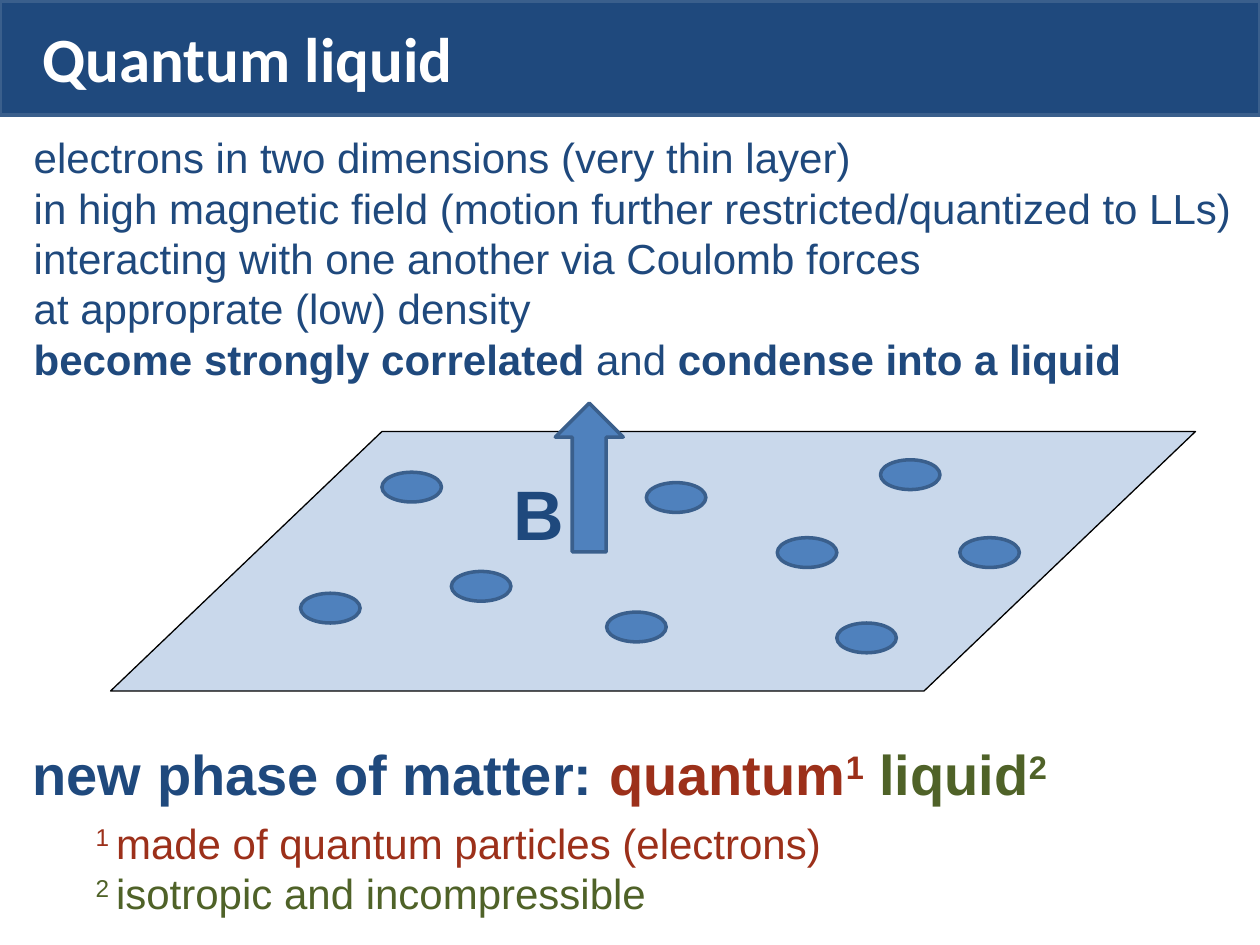
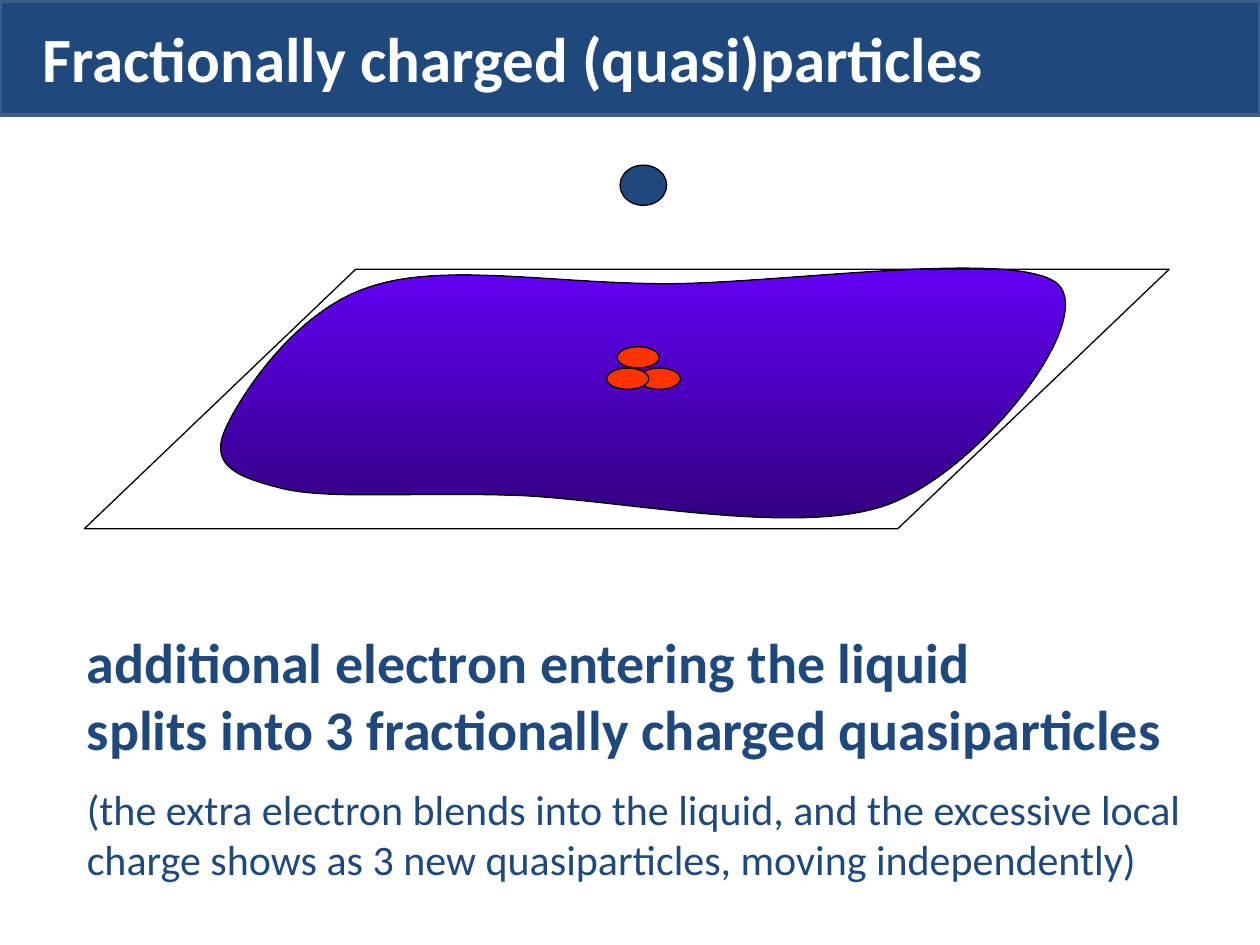
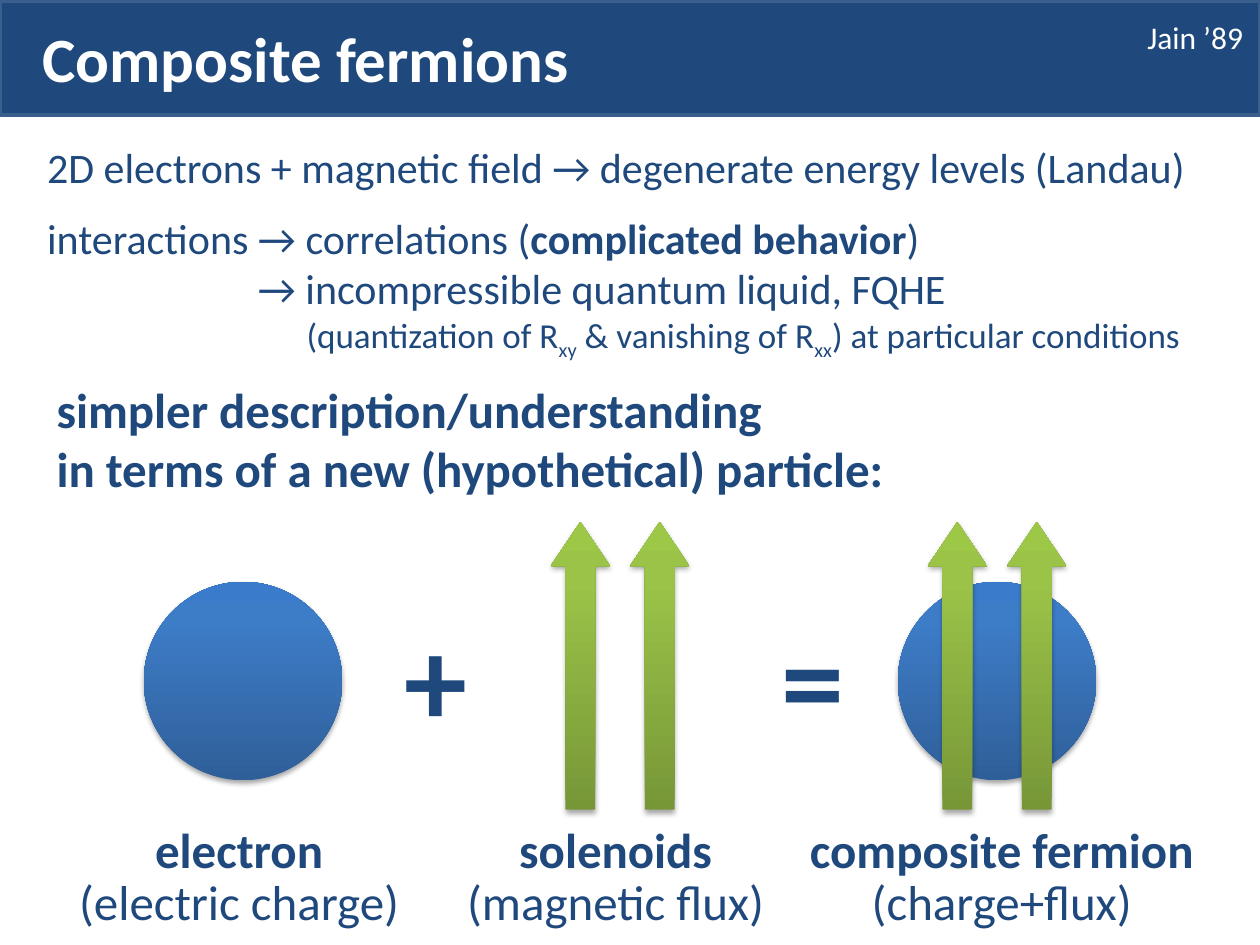
from copy import deepcopy
from dataclasses import dataclass

from lxml.etree import SubElement
from pptx import Presentation
from pptx.dml.color import RGBColor as RGB
from pptx.enum.shapes import MSO_SHAPE as Kind
from pptx.enum.text import MSO_ANCHOR as Anchor, MSO_AUTO_SIZE as Fit, PP_ALIGN as Align
from pptx.oxml.ns import qn
from pptx.util import Cm, Pt

NAVY = RGB(0x1F, 0x49, 0x7D)
EDGE = RGB(0x3A, 0x5F, 0x8C)
BLUE = RGB(0x4F, 0x81, 0xBD)
WHITE = RGB(0xFF, 0xFF, 0xFF)
BLACK = RGB(0, 0, 0)
RUST = RGB(0x9C, 0x30, 0x1A)
OLIVE = RGB(0x4F, 0x62, 0x28)
RED = RGB(0xFF, 0x33, 0x00)

# Gradient stops as (position, colour), from bottom to top
LIQUID = [(0, RGB(0x2F, 0x00, 0x76)), (1, RGB(0x66, 0x00, 0xFF))]
SPHERE = [(0, RGB(0x2F, 0x5F, 0x99)), (0.8, RGB(0x3D, 0x7C, 0xC7)), (1, RGB(0x3A, 0x7C, 0xCB))]
GREEN = [(0, RGB(0x77, 0x97, 0x37)), (0.8, RGB(0x9B, 0xC3, 0x48)), (1, RGB(0x9D, 0xC7, 0x46))]


@dataclass
class Run:
    text: str
    size: int
    bold: bool = False
    tint: RGB = NAVY
    base: int = 0


def paint(shape, fill=None, line=None, width=0.75):
    """Set a plain, gradient or empty fill and the outline; drop the shadow."""
    shape.shadow.inherit = False
    if fill is None:
        shape.fill.background()
    elif isinstance(fill, list):
        shape.fill.gradient()
        shape.fill.gradient_angle = 90
        first = shape.fill.gradient_stops[0]._gs
        for _ in fill[2:]:
            first.addnext(deepcopy(first))
        for stop, (place, tint) in zip(shape.fill.gradient_stops, fill):
            stop.position = place
            stop.color.rgb = tint
    else:
        shape.fill.solid()
        shape.fill.fore_color.rgb = fill
    if line is None:
        shape.line.fill.background()
    else:
        shape.line.color.rgb = line
        shape.line.width = Pt(width)
    return shape


def write(slide, spot, rows, font="Calibri", align=Align.LEFT, wrap=True):
    """Add a text box with one paragraph per row of runs; return its frame."""
    frame = slide.shapes.add_textbox(*map(Cm, spot)).text_frame
    frame.word_wrap = wrap
    frame.auto_size = Fit.SHAPE_TO_FIT_TEXT
    for i, row in enumerate(rows):
        para = frame.add_paragraph() if i else frame.paragraphs[0]
        para.alignment = align
        for part in row:
            for j, text in enumerate(part.text.split("\n")):
                if j:
                    para.add_line_break()
                if not text:
                    continue
                run = para.add_run()
                run.text = text
                run.font.name = font
                run.font.size = Pt(part.size)
                run.font.bold = part.bold
                run.font.color.rgb = part.tint
                if part.base:
                    run._r.get_or_add_rPr().set("baseline", str(part.base * 1000))
    return frame


deck = Presentation()
deck.slide_width, deck.slide_height = Cm(25.4), Cm(19.05)

# Shared title band
slides = []
for title in ("Quantum liquid", "Fractionally charged (quasi)particles", "Composite fermions"):
    slide = deck.slides.add_slide(deck.slide_layouts[6])
    band = slide.shapes.add_shape(Kind.RECTANGLE, 0, Cm(0.03), Cm(25.4), Cm(2.29))
    paint(band, NAVY, EDGE, 2)
    frame = write(slide, (0.61, -0.08, 23.39, 2.46), [[Run(title, 36, True, WHITE)]])
    frame.auto_size = Fit.NONE
    frame.vertical_anchor = Anchor.MIDDLE
    slides.append(slide)
matter, charge, fermion = slides

# Quantum liquid
write(matter, (0.43, 2.53, 24.69, 5.38), [
    [Run("electrons in two dimensions (very thin layer)\n"
         "in high magnetic field (motion further restricted/quantized to LLs)\n"
         "interacting with one another via Coulomb forces\n"
         "at approprate (low) density", 24)],
    [Run("become strongly correlated ", 24, True), Run("and ", 24),
     Run("condense into a liquid", 24, True)],
], "Arial")

layer = matter.shapes.add_shape(Kind.PARALLELOGRAM, Cm(2.23), Cm(8.7), Cm(21.87), Cm(5.23))
layer.adjustments[0] = 1.046
paint(layer, BLUE, BLACK)
tint = layer._element.spPr.find(qn("a:solidFill"))[0]
SubElement(tint, qn("a:alpha")).set("val", "30000")

for x, y in ((6.06, 11.96), (7.7, 9.52), (9.1, 11.52), (13.03, 9.73), (12.23, 12.34),
             (17.75, 9.27), (15.67, 10.84), (16.87, 12.56), (19.35, 10.84)):
    dot = matter.shapes.add_shape(Kind.OVAL, Cm(x), Cm(y), Cm(1.2), Cm(0.6))
    paint(dot, BLUE, EDGE, 2)

field = matter.shapes.add_shape(Kind.RIGHT_ARROW, Cm(10.38), Cm(8.94), Cm(3), Cm(1.37))
field.rotation = 270
paint(field, BLUE, EDGE, 2)
write(matter, (10.11, 9.36, 1.55, 1.96), [[Run("B", 40, True)]], "Arial", wrap=False)

frame = write(matter, (0.41, 14.79, 24.69, 3.89), [
    [Run("new phase of matter: ", 32, True), Run("quantum", 32, True, RUST),
     Run("1", 32, True, RUST, 30), Run(" liquid", 32, True, OLIVE),
     Run("2", 32, True, OLIVE, 30)],
    [Run("1 ", 24, False, RUST, 30), Run("made of quantum particles (electrons)", 24, False, RUST)],
    [Run("2 ", 24, False, OLIVE, 30), Run("isotropic and incompressible", 24, False, OLIVE)],
], "Arial")
frame.paragraphs[0].space_after = Pt(6)
for para in frame.paragraphs[1:]:
    para.level = 1
    para._p.get_or_add_pPr().set("marL", str(Cm(1.27)))
    para._p.get_or_add_pPr().set("indent", "0")

# Fractionally charged (quasi)particles
# Each row holds two control points and the end of one curve
start = (5.74, 9.86)
curves = [
    (4.8, 9.63), (4.24, 9.4), (4.52, 8.71),
    (4.8, 8.03), (5.94, 6.27), (7.44, 5.79),
    (8.92, 5.28), (11.13, 5.72), (13.44, 5.72),
    (15.75, 5.72), (20.57, 5), (21.34, 5.74),
    (22.07, 6.5), (19.79, 9.45), (17.93, 10.16),
    (16.08, 10.87), (12.24, 10.01), (10.19, 9.98),
    (8.13, 9.93), (6.68, 10.06), start,
]
pen = charge.shapes.build_freeform(Cm(start[0]), Cm(start[1]))
pen.add_line_segments([(Cm(x), Cm(y)) for x, y in curves], close=True)
pool = paint(pen.convert_to_shape(), LIQUID, BLACK)
sides = list(pool._element.iter(qn("a:lnTo")))
for i in range(0, len(curves), 3):
    bend = sides[i]
    bend.tag = qn("a:cubicBezTo")
    for side in sides[i + 1:i + 3]:
        bend.append(side[0])
        side.getparent().remove(side)

for x, y, wide, high, tint in ((12.5, 3.33, 0.94, 0.81, NAVY), (12.87, 7.42, 0.85, 0.43, RED),
                               (12.44, 6.99, 0.85, 0.43, RED), (12.23, 7.42, 0.85, 0.43, RED)):
    dot = charge.shapes.add_shape(Kind.OVAL, Cm(x), Cm(y), Cm(wide), Cm(high))
    paint(dot, tint, BLACK)

frame = write(charge, (1.5, 12.53, 22.58, 5.46), [
    [Run("additional electron entering the liquid \n"
         "splits into 3 fractionally charged quasiparticles", 32, True)],
    [Run("(the extra electron blends into the liquid, and the excessive local "
         "charge shows as 3 new quasiparticles, moving independently)", 24)],
])
for para in frame.paragraphs:
    para.space_after = Pt(12)

plane = charge.shapes.add_shape(Kind.PARALLELOGRAM, Cm(1.7), Cm(5.43), Cm(21.87), Cm(5.23))
plane.adjustments[0] = 1.046
paint(plane, None, BLACK)

# Composite fermions
frame = write(fermion, (12.7, 0.23, 12.61, 1.02), [[Run("Jain ’89", 18, False, WHITE)]],
              align=Align.RIGHT)
frame.paragraphs[0].space_after = Pt(3)

frame = write(fermion, (0.7, 2.72, 23.75, 4.78), [
    [Run("2D electrons + magnetic field → degenerate energy levels (Landau)", 24)],
    [Run("interactions → correlations (", 24), Run("complicated behavior", 24, True),
     Run(") \n\t→ incompressible quantum liquid, FQHE \n", 24),
     Run("\t\t(quantization of R", 20), Run("xy", 20, base=-25), Run(" & vanishing of R", 20),
     Run("xx", 20, base=-25), Run(") at particular conditions", 20)],
], wrap=False)
for para in frame.paragraphs:
    para.space_after = Pt(12)
tabs = SubElement(frame.paragraphs[1]._p.get_or_add_pPr(), qn("a:tabLst"))
for stop in (4.25, 5.23):
    SubElement(tabs, qn("a:tab"), pos=str(Cm(stop)), algn="l")

frame = write(fermion, (0.89, 7.52, 17.4, 2.64), [
    [Run("simpler description/understanding \nin terms of a new (hypothetical) particle:", 28, True)],
], wrap=False)
frame.paragraphs[0].space_after = Pt(12)

ball = (Kind.OVAL, 11.73, 4, 4, SPHERE)
tube = (Kind.UP_ARROW, 10.52, 1.2, 5.8, GREEN)
for x, (kind, y, wide, high, fill) in ((2.9, ball), (11.1, tube), (12.7, tube),
                                       (18.1, ball), (18.7, tube), (20.3, tube)):
    shape = fermion.shapes.add_shape(kind, Cm(x), Cm(y), Cm(wide), Cm(high))
    if kind == Kind.UP_ARROW:
        shape.adjustments[1] = 0.743
    paint(shape, fill)
    glow = SubElement(shape._element.spPr.find(qn("a:effectLst")), qn("a:outerShdw"),
                      blurRad=str(Pt(3.1)), dist=str(Pt(1.8)), dir="5400000", rotWithShape="0")
    shade = SubElement(glow, qn("a:srgbClr"), val="000000")
    SubElement(shade, qn("a:alpha"), val="35000")

for x, wide, name, note in ((1.3, 7.04, "electron", "(electric charge)"),
                            (9.12, 6.58, "solenoids", "(magnetic flux)"),
                            (15.98, 8.43, "composite fermion", "(charge+flux)")):
    frame = write(fermion, (x, 16.52, wide, 2.41), [[Run(name + "\n", 28, True), Run(note, 28)]],
                  align=Align.CENTER, wrap=False)
    frame.paragraphs[0].line_spacing = 0.9

for x, sign in ((7.9, "+"), (15.5, "=")):
    write(fermion, (x, 11.99, 1.8, 3.33), [[Run(sign, 72, True)]], wrap=False)

deck.save("out.pptx")
